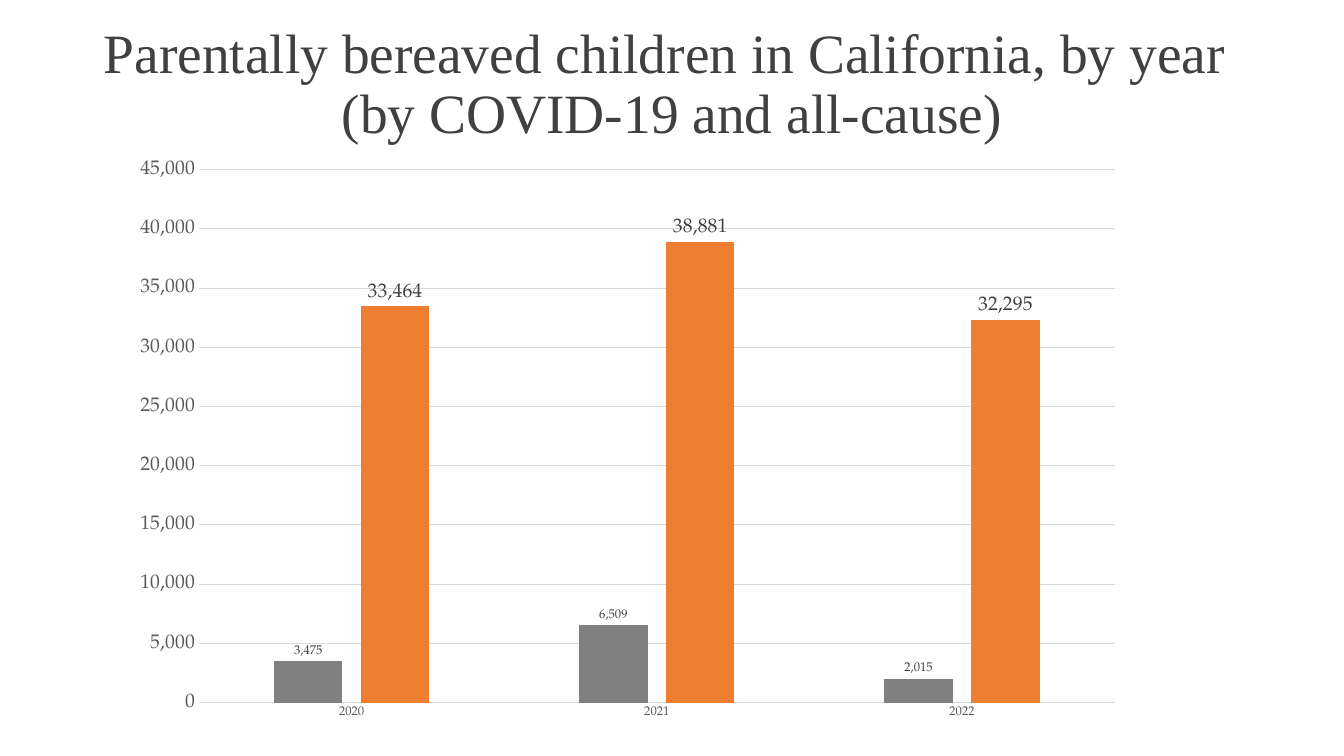
from pptx import Presentation
from pptx.chart.data import CategoryChartData
from pptx.dml.color import RGBColor
from pptx.enum import chart as ch, text
from pptx.util import Pt

theme = {
    "serif": "Times New Roman", "book": "TeX Gyre Pagella",
    "title": 39.6, "base": 10, "small": 9, "large": 14,
    "black": "000000", "dark": "404040", "mid": "595959", "rule": "D9D9D9",
    "gray": "808080", "orange": "ED7D31",
}


def style(font, face, size, color):
    font.name = theme[face]
    font.size = Pt(theme[size])
    font.bold = False
    font.color.rgb = RGBColor.from_string(theme[color])


def rule(line):
    line.color.rgb = RGBColor.from_string(theme["rule"])
    line.width = Pt(0.75)


deck = Presentation()
deck.slide_width, deck.slide_height = Pt(960), Pt(540)
slide = deck.slides.add_slide(deck.slide_layouts[6])

data = CategoryChartData(number_format="#,##0")
data.categories = ["2020", "2021", "2022"]
data.add_series("Series 1", [3475, 6509, 2015])
data.add_series("Series 2", [33464, 38881, 32295])
frame = slide.shapes.add_chart(
    ch.XL_CHART_TYPE.COLUMN_CLUSTERED, Pt(85.7), Pt(105.8), Pt(725), Pt(416.2), data)
chart = frame.chart
chart.has_title = False
chart.has_legend = False
style(chart.font, "serif", "base", "black")

years = chart.category_axis
style(years.tick_labels.font, "book", "small", "mid")
rule(years.format.line)

counts = chart.value_axis
style(counts.tick_labels.font, "book", "large", "mid")
counts.tick_labels.number_format = "#,##0"
counts.tick_labels.number_format_is_linked = False
counts.minimum_scale, counts.maximum_scale = 0, 45000
counts.major_unit = 5000
counts.format.line.fill.background()
rule(counts.major_gridlines.format.line)

for axis in (years, counts):
    axis.major_tick_mark = ch.XL_TICK_MARK.NONE
    axis.minor_tick_mark = ch.XL_TICK_MARK.NONE

plot = chart.plots[0]
plot.gap_width, plot.overlap = 219, -27
plot.vary_by_categories = False
for bars, color, size in zip(plot.series, ("gray", "orange"), ("small", "large")):
    bars.format.fill.solid()
    bars.format.fill.fore_color.rgb = RGBColor.from_string(theme[color])
    labels = bars.data_labels
    labels.show_value = True
    labels.number_format = "#,##0"
    labels.number_format_is_linked = False
    labels.position = ch.XL_LABEL_POSITION.OUTSIDE_END
    style(labels.font, "book", size, "dark")

title = slide.shapes.add_textbox(Pt(25.9), Pt(28.8), Pt(907.9), Pt(64.1)).text_frame
title.word_wrap = True
title.vertical_anchor = text.MSO_ANCHOR.MIDDLE
para = title.paragraphs[0]
para.alignment = text.PP_ALIGN.CENTER
para.line_spacing = 0.9
head = para.add_run()
head.text = "Parentally bereaved children in California, by year "
para.add_line_break()
tail = para.add_run()
tail.text = "(by COVID-19 and all-cause)"
for run in (head, tail):
    style(run.font, "serif", "title", "dark")

deck.save("out.pptx")
